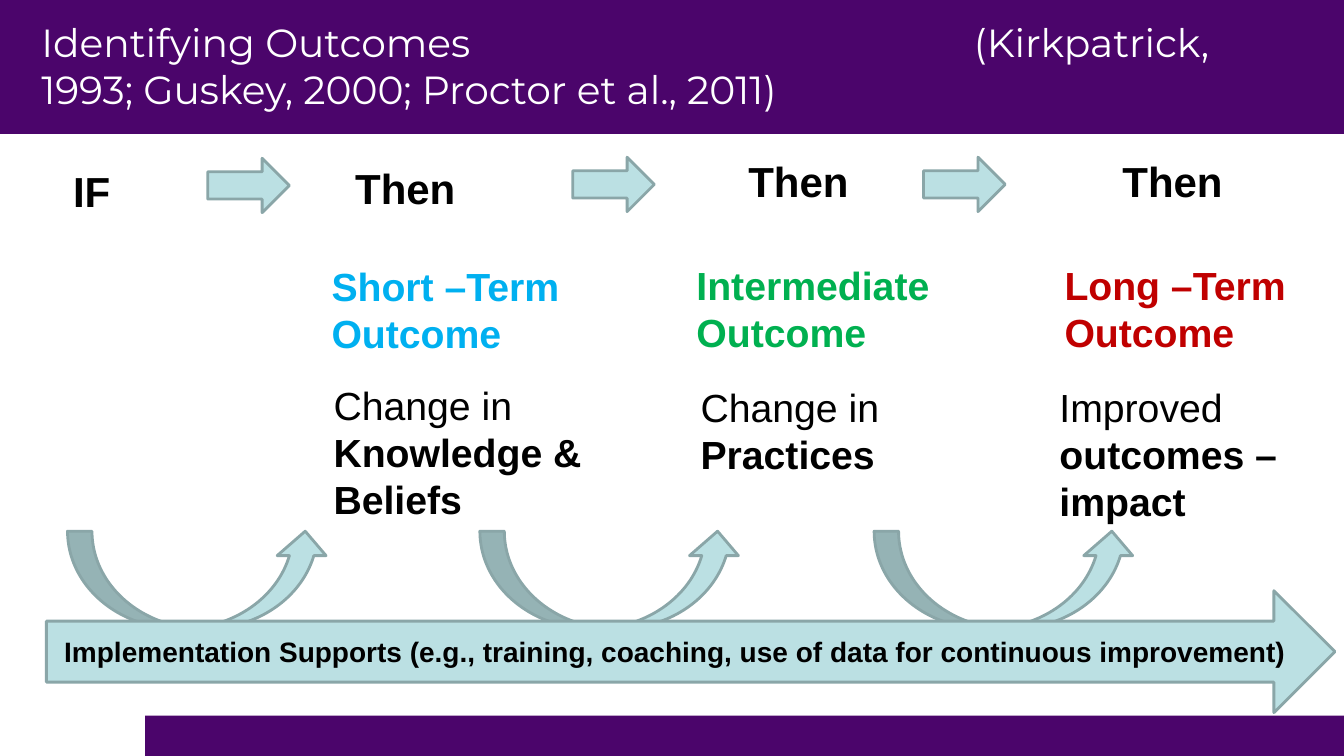
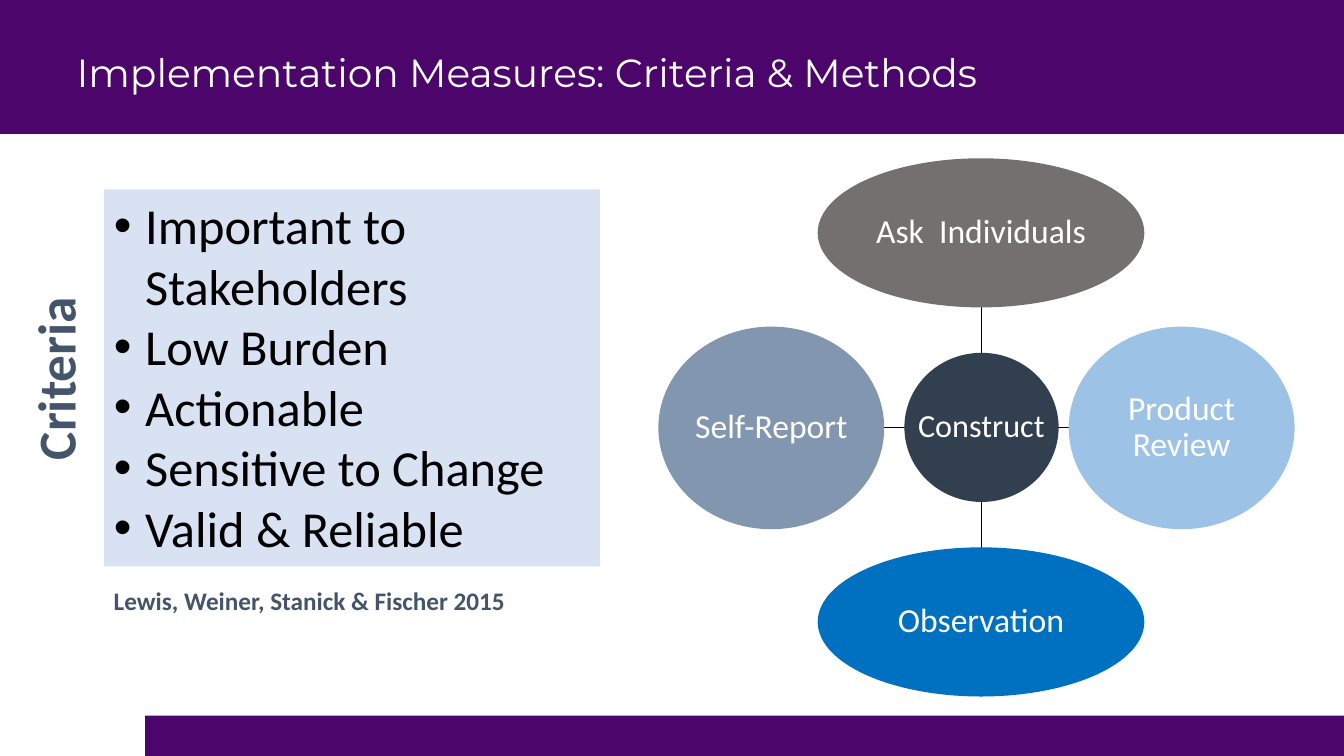
"""Build two slides on identifying outcomes and on implementation measures."""
from dataclasses import dataclass
from typing import Any, Optional

import lxml.etree
import pptx
import pptx.dml.color
import pptx.enum.shapes
import pptx.enum.text
import pptx.oxml.ns
import pptx.util

EMU_PER_PX = 9144
WIDTH, HEIGHT = 1333, 750
PURPLE, WHITE, BLACK = "4B056B", "FFFFFF", "000000"
PALE_TEAL, TEAL_EDGE, PALE_BLUE, SLATE = "BBE0E3", "8AA6A8", "D8E2F3", "44546A"
TITLE_FONT, DIAGRAM_FONT, TEXT_FONT = "Montserrat", "Arial", "Calibri"

SHAPE = pptx.enum.shapes.MSO_SHAPE
ALIGN = pptx.enum.text.PP_ALIGN
ANCHOR = pptx.enum.text.MSO_ANCHOR

Area = tuple[int, int, int, int]


@dataclass(frozen=True)
class Stage:
    """A column of the outcome chain: heading, term and change."""

    heading: Area
    term: str
    term_at: tuple[int, int]
    color: str
    change: str
    emphasis: str
    change_at: tuple[int, int]
    change_height: int


@dataclass(frozen=True)
class Method:
    """A labelled ellipse around its centre."""

    label: str
    center: tuple[int, int]
    size: tuple[int, int]
    color: str
    font_size: int = 24
    wrap: bool = False


STAGES = (
    Stage((281, 156, 242, 61), "Short –Term", (319, 255), "00B0F0",
          "Change in ", "Knowledge & Beliefs", (321, 373), 151),
    Stage((667, 149, 250, 61), "Intermediate", (681, 254), "00B050",
          "Change in ", "Practices", (685, 375), 104),
    Stage((1038, 149, 250, 61), "Long –Term", (1046, 254), "C00000",
          "Improved ", "outcomes – impact", (1041, 375), 151),
)
STEP_ARROWS = ((206, 157), (568, 156), (916, 156))
LOOP_LEFTS = (67, 476, 867)

CONSTRUCT = Method("Construct", (973, 424), (153, 148), "323F4F", 23)
METHODS = (
    Method("Ask  Individuals", (973, 231), (324, 148), "757070"),
    Method("Product Review", (1172, 424), (224, 201), "9CC2E5", wrap=True),
    Method("Observation", (973, 617), (324, 148), "0070C0"),
    Method("Self-Report", (765, 424), (224, 201), "8296B0"),
)
CRITERIA = "\n".join((
    "Important to Stakeholders", "Low Burden", "Actionable",
    "Sensitive to Change", "Valid & Reliable",
))


def px(length: int) -> pptx.util.Emu:
    """Turn whole px into EMU."""
    return pptx.util.Emu(length * EMU_PER_PX)


def rgb(color: str) -> pptx.dml.color.RGBColor:
    """Turn a hex string into a colour."""
    return pptx.dml.color.RGBColor.from_string(color)


def place(box: Any, area: Area) -> None:
    """Move and size a box."""
    box.left, box.top, box.width, box.height = map(px, area)


def add_element(parent: Any, tag: str, **attributes: str) -> Any:
    """Append a drawing element with its attributes."""
    return lxml.etree.SubElement(parent, pptx.oxml.ns.qn(tag), attributes)


def write(box: Any, text: str, *, size: int, color: str = BLACK,
          font: str = DIAGRAM_FONT, bold: bool = False, bold_tail: str = "",
          align: Any = ALIGN.LEFT, anchor: Any = ANCHOR.TOP,
          line_spacing: Optional[float] = None, inset: Optional[int] = None,
          wrap: bool = True) -> None:
    """Write formatted text, one paragraph for each line."""
    frame = box.text_frame
    frame.word_wrap = wrap
    frame.auto_size = pptx.enum.text.MSO_AUTO_SIZE.NONE
    frame.vertical_anchor = anchor
    if inset is not None:
        frame.margin_left = frame.margin_right = px(inset)
        frame.margin_top = frame.margin_bottom = px(inset)
    for index, line in enumerate(text.split("\n")):
        para = frame.add_paragraph() if index else frame.paragraphs[0]
        para.alignment = align
        para.space_before = pptx.util.Pt(0)
        if line_spacing:
            para.line_spacing = line_spacing
        for words, heavy in ((line, bold), (bold_tail, True)):
            if words:
                span = para.add_run()
                span.text = words
                span.font.name = font
                span.font.size = pptx.util.Pt(size)
                span.font.bold = heavy
                span.font.color.rgb = rgb(color)


def add_text(page: Any, area: Area, text: str, **text_format: Any) -> Any:
    """Add a text box with formatted text."""
    box = page.shapes.add_textbox(*map(px, area))
    write(box, text, **text_format)
    return box


def add_figure(page: Any, kind: Any, area: Area, fill: str,
               edge: Optional[str] = None) -> Any:
    """Add a filled preset shape, outlined if an edge colour is given."""
    figure = page.shapes.add_shape(kind, *map(px, area))
    figure.shadow.inherit = False
    figure.fill.solid()
    figure.fill.fore_color.rgb = rgb(fill)
    if edge:
        figure.line.color.rgb = rgb(edge)
        figure.line.width = pptx.util.Pt(2)
    else:
        figure.line.fill.background()
    return figure


def add_arrow(page: Any, kind: Any, area: Area) -> Any:
    """Add a teal block arrow."""
    return add_figure(page, kind, area, PALE_TEAL, TEAL_EDGE)


def add_line(page: Any, start: tuple[int, int], end: tuple[int, int]) -> None:
    """Add a thin black straight line."""
    line = page.shapes.add_connector(
        pptx.enum.shapes.MSO_CONNECTOR.STRAIGHT, *map(px, start + end))
    line.line.color.rgb = rgb(BLACK)
    line.line.width = pptx.util.Pt(0.75)
    add_element(line.element.spPr, "a:effectLst")


def add_master_bands(deck: Any, page: Any) -> None:
    """Put the purple bands on the slide master."""
    tree = deck.slide_master.shapes.element
    for index, area in enumerate(((0, 0, WIDTH, 133), (144, 710, WIDTH - 144, 40))):
        band = add_figure(page, SHAPE.RECTANGLE, area, PURPLE)
        band.element.nvSpPr.cNvPr.set("id", str(101 + index))
        tree.insert(2 + index, band.element)


def set_title(page: Any, text: str, left: int, top: int) -> Any:
    """Place and write the slide title."""
    title = page.shapes.title
    place(title, (left, top, 1200, 125))
    write(title, text, size=28, color=WHITE, font=TITLE_FONT, anchor=ANCHOR.MIDDLE)
    return title


def add_bullets(box: Any) -> None:
    """Give every paragraph a hanging round bullet."""
    for para in box.text_frame.paragraphs:
        properties = para._p.get_or_add_pPr()
        properties.set("marL", str(px(31)))
        properties.set("indent", str(px(-31)))
        bullet_color = add_element(properties, "a:buClr")
        add_element(bullet_color, "a:srgbClr", val=BLACK)
        add_element(properties, "a:buFont", typeface="Arial")
        add_element(properties, "a:buChar", char="•")


def build_outcomes(page: Any) -> None:
    """Build the chain of outcomes."""
    title = set_title(
        page, "Identifying Outcomes\t(Kirkpatrick, 1993; Guskey, 2000; Proctor et al., 2011)",
        31, 2)
    tabs = add_element(title.text_frame.paragraphs[0]._p.get_or_add_pPr(), "a:tabLst")
    add_element(tabs, "a:tab", pos=str(px(925)), algn="l")

    heading = {"size": 30, "bold": True, "align": ALIGN.CENTER}
    add_text(page, (25, 159, 132, 61), "IF", **heading)
    for left, top in STEP_ARROWS:
        add_arrow(page, SHAPE.RIGHT_ARROW, (left, top, 81, 54))
    for left in LOOP_LEFTS:
        add_arrow(page, SHAPE.CURVED_UP_ARROW, (left, 527, 260, 97))
    for stage in STAGES:
        add_text(page, stage.heading, "Then", **heading)
        add_text(page, (*stage.term_at, 287, 104), f"{stage.term}\nOutcome",
                 size=28, color=stage.color, bold=True)
        add_text(page, (*stage.change_at, 287, stage.change_height), stage.change,
                 size=28, bold_tail=stage.emphasis)
    supports = add_arrow(page, SHAPE.RIGHT_ARROW, (46, 586, 1278, 121))
    write(supports, "Implementation Supports (e.g., training, coaching, "
          "use of data for continuous improvement)",
          size=20, bold=True, align=ALIGN.CENTER, anchor=ANCHOR.MIDDLE)


def add_method(page: Any, method: Method) -> None:
    """Draw a labelled ellipse."""
    (x, y), (width, height) = method.center, method.size
    ellipse = add_figure(page, SHAPE.OVAL,
                         (x - width // 2, y - height // 2, width, height), method.color)
    write(ellipse, method.label, size=method.font_size, color=WHITE, font=TEXT_FONT,
          align=ALIGN.CENTER, anchor=ANCHOR.MIDDLE, line_spacing=0.9, inset=2,
          wrap=method.wrap)


def build_measures(page: Any) -> None:
    """Build the criteria list and the ring of methods."""
    set_title(page, "Implementation Measures: Criteria & Methods", 66, 9)
    criteria = page.placeholders[1]
    place(criteria, (103, 188, 492, 374))
    criteria.fill.solid()
    criteria.fill.fore_color.rgb = rgb(PALE_BLUE)
    write(criteria, CRITERIA, size=36, font=TEXT_FONT)
    add_bullets(criteria)

    note = {"color": SLATE, "font": TEXT_FONT, "bold": True}
    add_text(page, (103, 576, 550, 40), "Lewis, Weiner, Stanick & Fischer 2015",
             size=18, **note)
    side_label = add_text(page, (0, 323, 164, 105), "Criteria", size=38,
                          align=ALIGN.CENTER, line_spacing=0.9, inset=0,
                          wrap=False, **note)
    side_label.rotation = 270

    for method in METHODS:
        add_line(page, CONSTRUCT.center, method.center)
    for method in (CONSTRUCT, *METHODS):
        add_method(page, method)


def main() -> None:
    """Build and save the deck."""
    deck = pptx.Presentation()
    deck.slide_width, deck.slide_height = px(WIDTH), px(HEIGHT)
    outcomes = deck.slides.add_slide(deck.slide_layouts[5])
    measures = deck.slides.add_slide(deck.slide_layouts[1])
    add_master_bands(deck, outcomes)
    build_outcomes(outcomes)
    build_measures(measures)
    deck.save("out.pptx")


if __name__ == "__main__":
    main()
